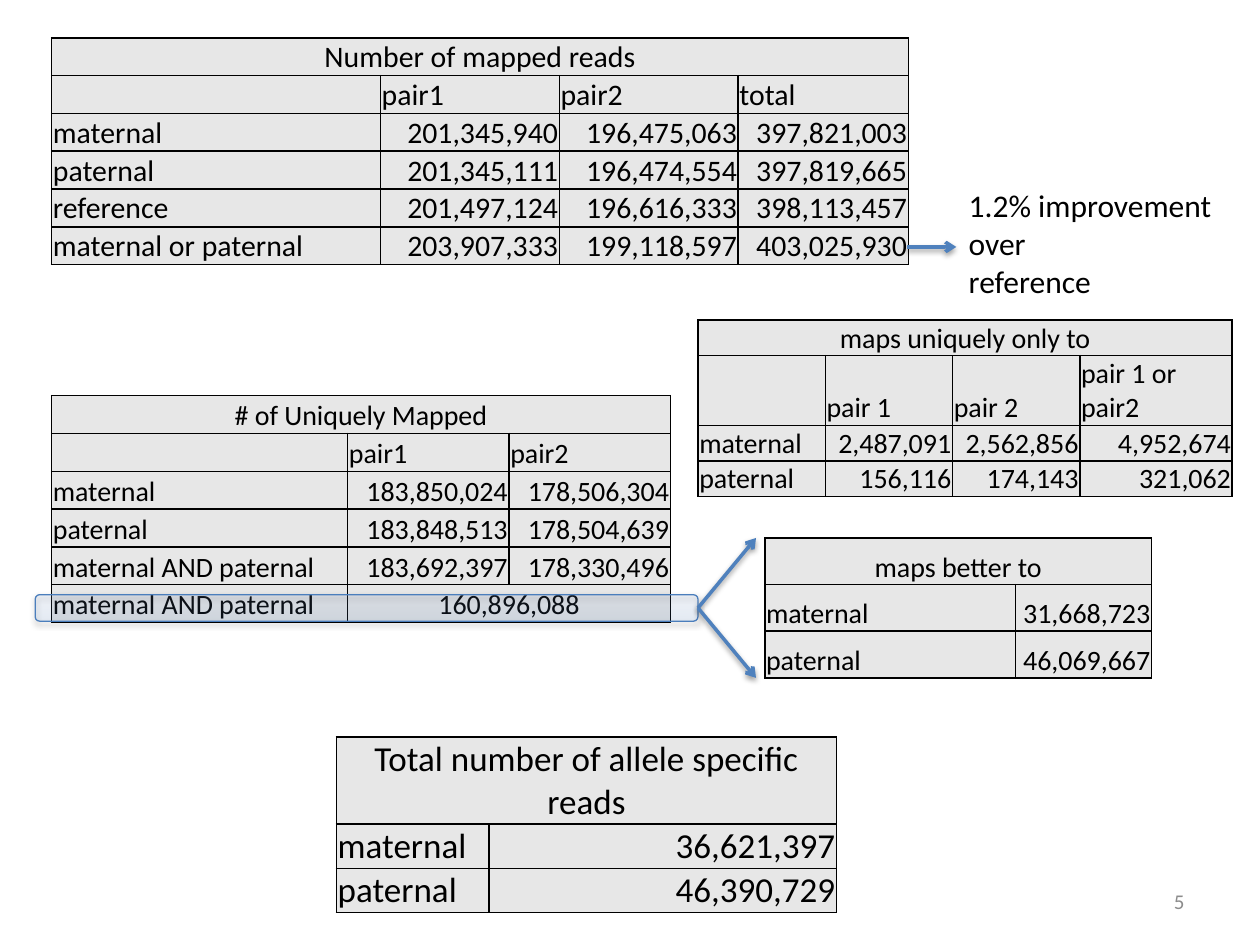
from pptx import Presentation
from pptx.dml.color import RGBColor
from pptx.enum.shapes import MSO_CONNECTOR, MSO_SHAPE
from pptx.enum.text import MSO_ANCHOR, MSO_AUTO_SIZE, PP_ALIGN
from pptx.oxml import parse_xml
from pptx.oxml.ns import nsdecls, qn
from pptx.util import Inches, Pt

LEFT, MID, RIGHT = PP_ALIGN.LEFT, PP_ALIGN.CENTER, PP_ALIGN.RIGHT
TOP, CENTER, BOTTOM = MSO_ANCHOR.TOP, MSO_ANCHOR.MIDDLE, MSO_ANCHOR.BOTTOM
GROW, FIXED = MSO_AUTO_SIZE.SHAPE_TO_FIT_TEXT, MSO_AUTO_SIZE.NONE
ROUND, STRAIGHT = MSO_SHAPE.ROUNDED_RECTANGLE, MSO_CONNECTOR.STRAIGHT
NS = nsdecls("a")


def color(code):
    return RGBColor.from_string(code)


def write(par, text, size, code, align):
    par.alignment = align
    run = par.add_run()
    run.text = text
    run.font.name = "Calibri"
    run.font.size = Pt(size)
    run.font.color.rgb = color(code)


prs = Presentation()
prs.slide_width, prs.slide_height = Inches(10), Inches(7.5)
shapes = prs.slides.add_slide(prs.slide_layouts[6]).shapes

# A row shorter than the grid merges its last entry to the right edge.
tables = [
    (0.41, 3.14, 16, [2.35, 1.28, 1.28], [0.3] * 6, [
        ["# of Uniquely Mapped"],
        ["", "pair1", "pair2"],
        ["maternal", "183,850,024", "178,506,304"],
        ["paternal", "183,848,513", "178,504,639"],
        ["maternal AND paternal", "183,692,397", "178,330,496"],
        ["maternal AND paternal", "160,896,088"]]),
    (6.07, 4.27, 16, [1.99, 1.08], [0.37] * 3, [
        ["maps better to"],
        ["maternal", "31,668,723"],
        ["paternal", "46,069,667"]]),
    (5.54, 2.54, 16, [1.01, 1.01, 1.01, 1.21], [0.28, 0.55, 0.28, 0.28], [
        ["maps uniquely only to"],
        ["", "pair 1", "pair 2", "pair 1 or pair2"],
        ["maternal", "2,487,091", "2,562,856", "4,952,674"],
        ["paternal", "156,116", "174,143", "321,062"]]),
    (2.67, 5.85, 20, [1.21, 2.76], [0.68, 0.35, 0.35], [
        ["Total number of allele specific reads"],
        ["maternal", "36,621,397"],
        ["paternal", "46,390,729"]]),
    (0.41, 0.3, 17, [2.61, 1.42, 1.42, 1.35], [0.3] * 6, [
        ["Number of mapped reads"],
        ["", "pair1", "pair2", "total"],
        ["maternal", "201,345,940", "196,475,063", "397,821,003"],
        ["paternal", "201,345,111", "196,474,554", "397,819,665"],
        ["reference", "201,497,124", "196,616,333", "398,113,457"],
        ["maternal or paternal", "203,907,333", "199,118,597", "403,025,930"]]),
]
for x, y, size, cols, rows, data in tables:
    table = shapes.add_table(len(rows), len(cols), Inches(x), Inches(y),
                             Inches(sum(cols)), Inches(sum(rows))).table
    table.first_row = table.horz_banding = False
    for col, width in zip(table.columns, cols):
        col.width = Inches(width)
    for row, height in zip(table.rows, rows):
        row.height = Inches(height)
    for r, words in enumerate(data):
        last = len(words) - 1
        short = len(words) < len(cols)
        for c in range(len(cols)):
            cell = table.cell(r, c)
            cell.margin_left = cell.margin_right = cell.margin_top = Inches(0.01)
            cell.margin_bottom = 0
            cell.vertical_anchor = BOTTOM
            for side in "LRTB":
                cell._tc.get_or_add_tcPr().append(parse_xml(
                    f'<a:ln{side} {NS} w="12700"><a:solidFill>'
                    f'<a:srgbClr val="000000"/></a:solidFill></a:ln{side}>'))
            cell.fill.solid()
            cell.fill.fore_color.rgb = color("E7E7E7")
            if c <= last:
                text = words[c]
                align = RIGHT if text[:1].isdigit() else LEFT
                if short and c == last:
                    align = MID
                write(cell.text_frame.paragraphs[0], text, size, "000000", align)
        if short:
            table.cell(r, last).merge(table.cell(r, len(cols) - 1))

notes = [
    (7.59, 1.43, 2.37, 1.01, ["1.2% improvement over", "reference"],
     18, "000000", LEFT, TOP, GROW),
    (7.17, 6.95, 2.33, 0.4, ["5"], 12, "8C8C8C", RIGHT, CENTER, FIXED),
]
for x, y, w, h, lines, size, code, align, anchor, fit in notes:
    frame = shapes.add_textbox(Inches(x), Inches(y), Inches(w), Inches(h)).text_frame
    frame.word_wrap = True
    frame.auto_size = fit
    frame.vertical_anchor = anchor
    for i, text in enumerate(lines):
        par = frame.add_paragraph() if i else frame.paragraphs[0]
        write(par, text, size, code, align)

band = shapes.add_shape(ROUND, Inches(0.28), Inches(4.72), Inches(5.26), Inches(0.21))
band.fill.gradient()
band.fill.gradient_angle = 90
for stop, code in zip(band.fill.gradient_stops, ["3F80CE", "A4C4FF"]):
    stop.color.rgb = color(code)
for tint in band._element.spPr.iter(qn("a:srgbClr")):
    tint.append(parse_xml(f'<a:alpha {NS} val="10000"/>'))
band.line.color.rgb = color("4B7EBC")
band.line.width = Pt(0.75)

shaded = [(band, 23000, 35000)]
arrows = [(7.2, 1.96, 7.59, 1.96), (5.54, 4.83, 6, 4.27), (5.54, 4.83, 6, 5.38)]
for i, ends in enumerate(arrows):
    arrow = shapes.add_connector(STRAIGHT, *[Inches(v) for v in ends])
    if i:
        arrow.begin_connect(band, 3)
    arrow.line.color.rgb = color("4F81BD")
    arrow.line.width = Pt(2)
    arrow.line._get_or_add_ln().append(parse_xml(f'<a:tailEnd {NS} type="arrow"/>'))
    shaded.append((arrow, 20000, 38000))

for item, dist, alpha in shaded:
    item._element.spPr.append(parse_xml(
        f'<a:effectLst {NS}><a:outerShdw blurRad="40000" dist="{dist}" dir="5400000" '
        f'rotWithShape="0"><a:srgbClr val="000000"><a:alpha val="{alpha}"/>'
        '</a:srgbClr></a:outerShdw></a:effectLst>'))

prs.save("out.pptx")
